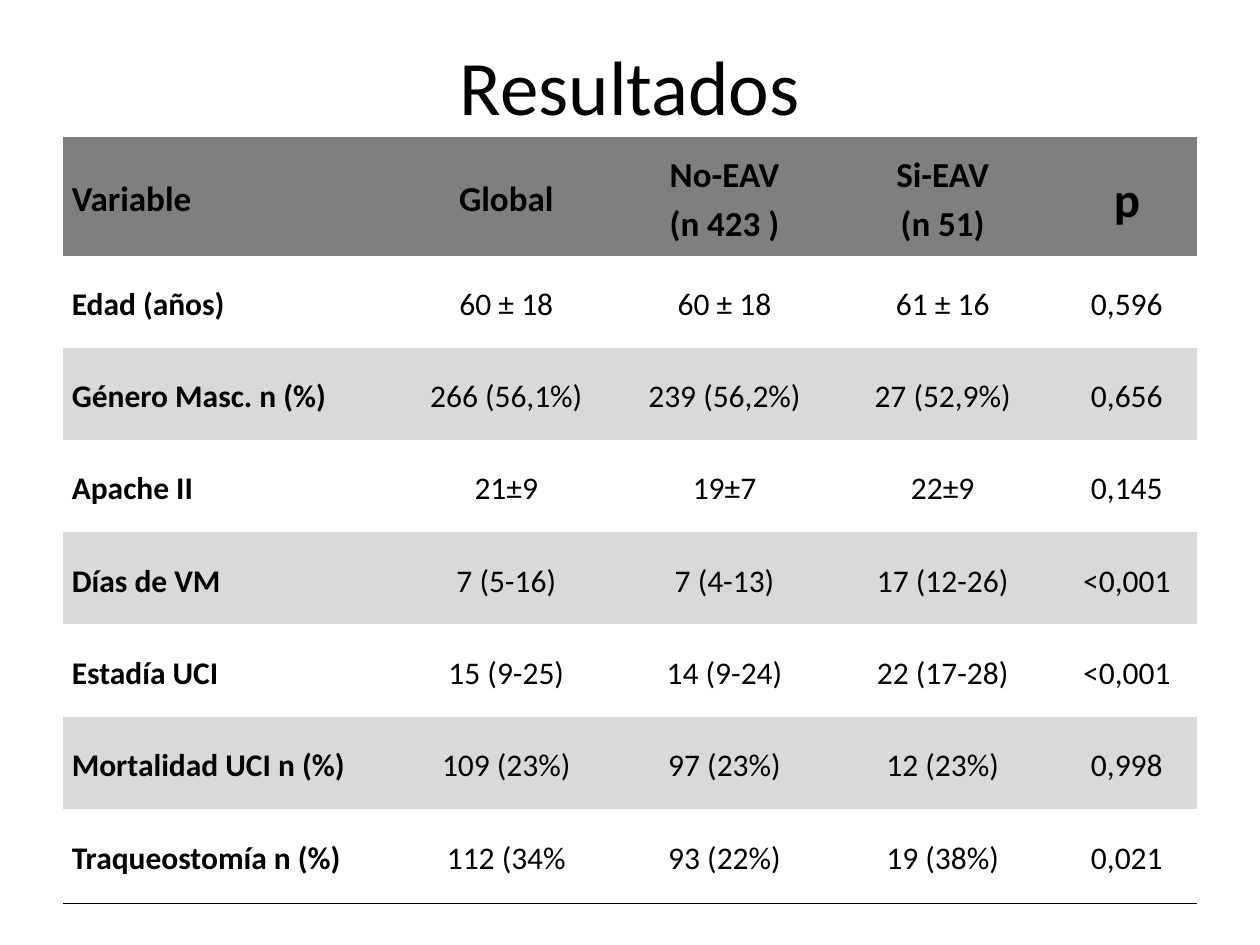
from lxml import etree
from pptx import Presentation
from pptx.dml.color import RGBColor
from pptx.enum.text import MSO_ANCHOR as Anchor, PP_ALIGN as Align
from pptx.oxml import parse_xml
from pptx.oxml.ns import nsdecls, qn
from pptx.util import Inches, Pt

BLACK = RGBColor(0x00, 0x00, 0x00)
HEADER_GRAY = RGBColor(0x7F, 0x7F, 0x7F)
BAND_GRAY = RGBColor(0xD9, 0xD9, 0xD9)
FONT = "Calibri"
PLAIN_STYLE = "{2D5ABB26-0587-4C30-8999-92F81FD0307C}"

COLUMN_WIDTHS = [2.61, 1.81, 1.65, 1.81, 1.11]
ROW_HEIGHTS = [0.94] + [0.73] * 6 + [0.75]
RESULTS = [
    ["Variable", "Global", "No-EAV\n(n 423 )", "Si-EAV\n(n 51)", "p"],
    ["Edad (años)", "60 ± 18", "60 ± 18", "61 ± 16", "0,596"],
    ["Género Masc. n (%)", "266 (56,1%)", "239 (56,2%)", "27 (52,9%)", "0,656"],
    ["Apache II", "21±9", "19±7", "22±9", "0,145"],
    ["Días de VM", "7 (5-16)", "7 (4-13)", "17 (12-26)", "<0,001"],
    ["Estadía UCI", "15 (9-25)", "14 (9-24)", "22 (17-28)", "<0,001"],
    ["Mortalidad UCI n (%)", "109 (23%)", "97 (23%)", "12 (23%)", "0,998"],
    ["Traqueostomía n (%)", "112 (34%", "93 (22%)", "19 (38%)", "0,021"],
]


def format_text(paragraph, size, bold, align):
    """Align a paragraph and format its runs."""
    paragraph.alignment = align
    for run in paragraph.runs:
        run.font.name = FONT
        run.font.size = Pt(size)
        run.font.bold = bold
        run.font.color.rgb = BLACK


def add_bottom_rule(cell):
    """Draw a thin black line under a cell."""
    rule = parse_xml(f'<a:lnB {nsdecls("a")} w="{Pt(0.75)}"/>')
    fill = etree.SubElement(rule, qn("a:solidFill"))
    etree.SubElement(fill, qn("a:srgbClr"), val=str(BLACK))
    cell._tc.get_or_add_tcPr().insert(0, rule)


def fill_cell(cell, content, row, column):
    """Write one result and style it by its row and column."""
    cell.text_frame.text = content
    cell.vertical_anchor = Anchor.MIDDLE
    cell.margin_left = cell.margin_right = Inches(0.07)
    cell.margin_top = cell.margin_bottom = Inches(0.07)
    if row == 0 or row % 2 == 0:
        cell.fill.solid()
        cell.fill.fore_color.rgb = BAND_GRAY if row else HEADER_GRAY
    else:
        cell.fill.background()
    size = 18 if row else 28 if content == "p" else 20
    align = Align.CENTER if column else Align.LEFT
    for paragraph in cell.text_frame.paragraphs:
        paragraph.line_spacing = 1.15
        format_text(paragraph, size, row == 0 or column == 0, align)
    if row == len(RESULTS) - 1:
        add_bottom_rule(cell)


def add_heading(slide, left, top, width, height):
    """Place and format the slide title."""
    heading = slide.shapes.title
    heading.left, heading.top = left, top
    heading.width, heading.height = width, height
    heading.text_frame.text = "Resultados"
    heading.text_frame.vertical_anchor = Anchor.MIDDLE
    format_text(heading.text_frame.paragraphs[0], 44, False, Align.CENTER)


def add_results(slide, left, top, width, height):
    """Build the results table in the given box."""
    results = slide.shapes.add_table(
        len(ROW_HEIGHTS), len(COLUMN_WIDTHS), left, top, width, height
    ).table
    results._tbl.tblPr.find(qn("a:tableStyleId")).text = PLAIN_STYLE
    results.horz_banding = False
    results.first_row = True
    for column, share in zip(results.columns, COLUMN_WIDTHS):
        column.width = int(width * share / sum(COLUMN_WIDTHS))
    for row, share in zip(results.rows, ROW_HEIGHTS):
        row.height = int(height * share / sum(ROW_HEIGHTS))
    for row, contents in enumerate(RESULTS):
        for column, content in enumerate(contents):
            fill_cell(results.cell(row, column), content, row, column)


def main():
    """Create the presentation and save it."""
    deck = Presentation()
    deck.slide_width, deck.slide_height = Inches(10), Inches(7.5)
    slide = deck.slides.add_slide(deck.slide_layouts[5])
    add_heading(slide, Inches(0.5), Inches(0.13), Inches(9), Inches(1.08))
    add_results(slide, Inches(0.5), Inches(1.09), Inches(9), Inches(6.08))
    deck.save("out.pptx")


if __name__ == "__main__":
    main()
